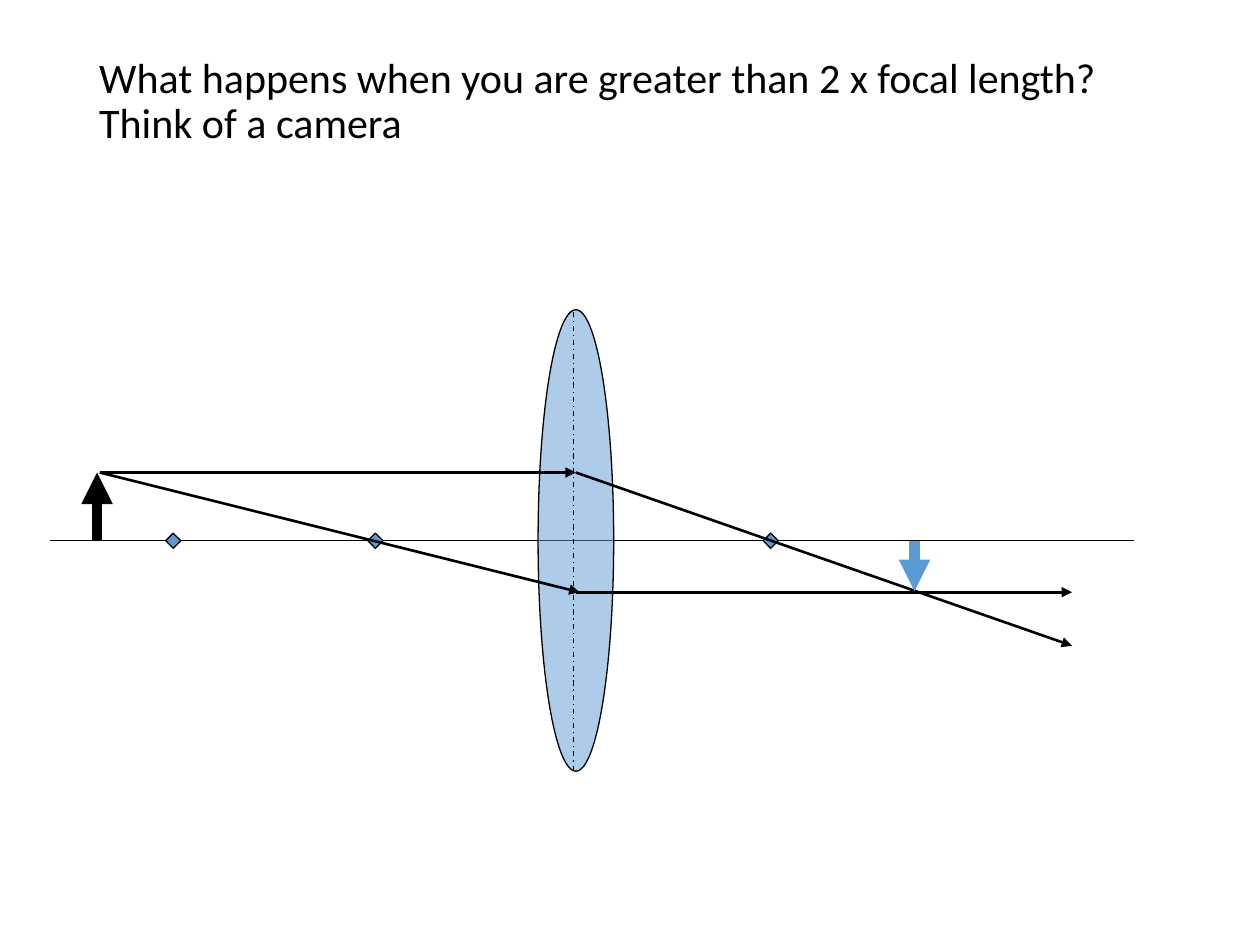
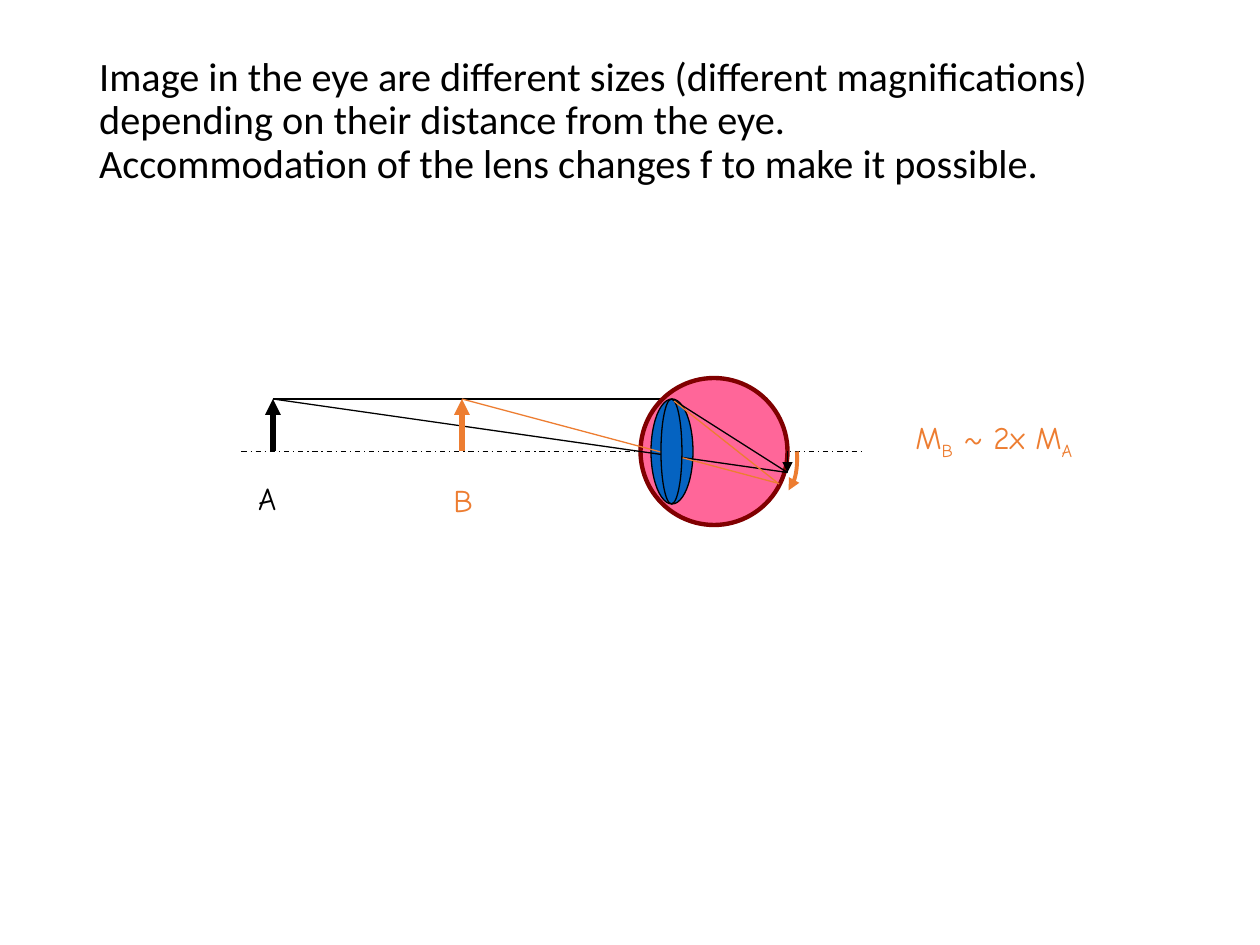
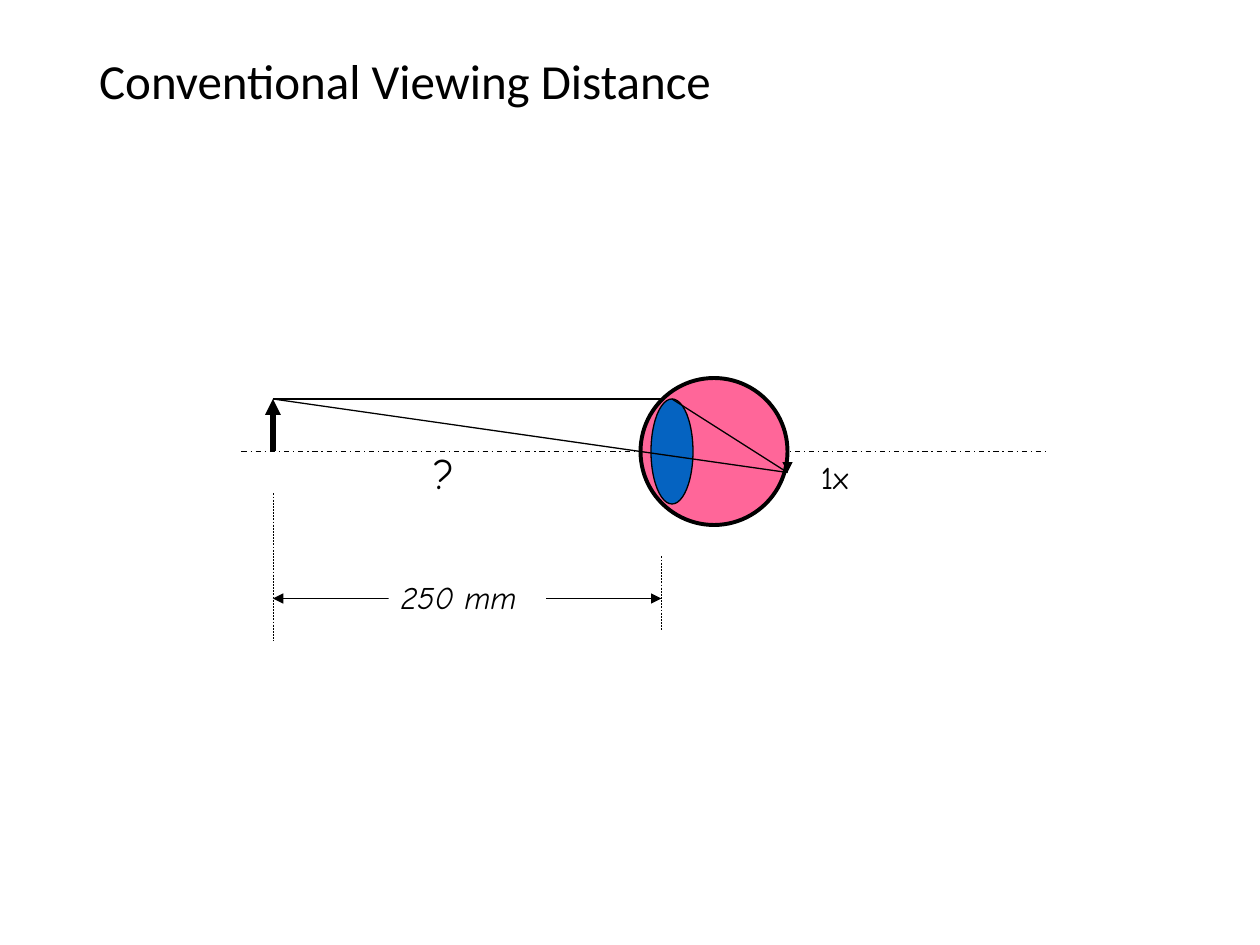
"""Three slides of ray diagrams: a camera lens, the eye at two distances, and the viewing distance."""
from lxml.etree import SubElement as Sub
from pptx import Presentation
from pptx.dml.color import RGBColor
from pptx.enum.dml import MSO_LINE as Dash
from pptx.enum.shapes import MSO_CONNECTOR as Conn, MSO_SHAPE as Kind
from pptx.enum.text import MSO_ANCHOR as Anchor, MSO_AUTO_SIZE as Fit, PP_ALIGN as Align
from pptx.oxml.ns import qn
from pptx.util import Inches, Pt

BLACK = RGBColor(0x00, 0x00, 0x00)
WHITE = RGBColor(0xFF, 0xFF, 0xFF)
SKY = RGBColor(0x5B, 0x9B, 0xD5)
BLUE = RGBColor(0x05, 0x63, 0xC1)
PINK = RGBColor(0xFF, 0x66, 0x99)
MAROON = RGBColor(0x80, 0x00, 0x00)
ORANGE = RGBColor(0xED, 0x7D, 0x31)

COLS, ROWS = 120, 90
CELL = Inches(10) / COLS


def draw_line(slide, start, end, color=BLACK, width=0.75, dash=None, ends=()):
    points = [round(v * CELL) for v in (*start, *end)]
    link = slide.shapes.add_connector(Conn.STRAIGHT, *points)
    link.line.color.rgb = color
    link.line.width = Pt(width)
    if dash:
        link.line.dash_style = dash
    for end_tag in ends:
        Sub(link.line._get_or_add_ln(), qn(f"a:{end_tag}"), type="triangle")
    Sub(link._element.spPr, qn("a:effectLst"))


def draw_shape(slide, kind, box, fill, edge=BLACK, width=0.75):
    shape = slide.shapes.add_shape(kind, *[round(v * CELL) for v in box])
    shape.shadow.inherit = False
    shape.fill.solid()
    shape.fill.fore_color.rgb = fill
    shape.line.color.rgb = edge
    shape.line.width = Pt(width)
    return shape


TAIL = ("tailEnd",)
BOTH = ("headEnd", "tailEnd")

deck = Presentation()
deck.slide_width, deck.slide_height = round(COLS * CELL), round(ROWS * CELL)

titles = [
    ("What happens when you are greater than 2 x focal length?\vThink of a camera", 24),
    ("Image in the eye are different sizes (different magnifications) depending on "
     "their distance from the eye.\vAccommodation of the lens changes f to make it possible.", 23),
    ("Conventional Viewing Distance", 28),
]
for text, size in titles:
    title = deck.slides.add_slide(deck.slide_layouts[5]).shapes.title
    title.left, title.top, title.width, title.height = [
        round(v * CELL) for v in (8.25, 4.8, 103.5, 17.4)]
    frame = title.text_frame
    frame.text = text
    frame.auto_size = Fit.NONE
    frame.vertical_anchor = Anchor.TOP
    para = frame.paragraphs[0]
    para.alignment = Align.LEFT
    para.line_spacing = 0.9
    para.font.name = "Calibri"
    para.font.size = Pt(size)
    para.font.color.rgb = BLACK
camera, eyes, view = deck.slides

axis, mid, top, low = 51.5, 54.85, 45, 56.4
draw_line(camera, (4.8, axis), (108, axis))
for focus in (16.5, 35.75, 73.4):
    draw_shape(camera, Kind.DIAMOND, (focus - 0.72, axis - 0.72, 1.44, 1.44), SKY)
draw_line(camera, (9.25, axis), (9.25, top), width=6, ends=TAIL)
lens = draw_shape(camera, Kind.OVAL, (51.25, 29.5, 7.2, 43.95), SKY)
tint = lens._element.spPr.find(qn("a:solidFill"))[0]
Sub(tint, qn("a:alpha"), val="50000")
rays = [
    ((9.5, top), (mid, top)),
    ((mid, top), (102.1, 61.5)),
    ((9.5, top), (55.2, low)),
    ((mid, low), (102.1, low)),
]
for start, end in rays:
    draw_line(camera, start, end, width=1.5, ends=TAIL)
draw_line(camera, (87.1, axis), (87.1, 56.3), SKY, 6, ends=TAIL)
draw_line(camera, (54.6, 73.4), (54.6, 29.4), dash=Dash.DASH_DOT)

axis, tip, far, near = 43, 38, 26, 44
pupil, spot = (64, tip), (75, 45)
for slide, end, rim, width in ((eyes, 82, MAROON, 2.5), (view, 100, BLACK, 2.25)):
    draw_line(slide, (23, axis), (end, axis), dash=Dash.DASH_DOT)
    draw_line(slide, (far, axis), (far, tip), width=3, ends=TAIL)
    draw_line(slide, (far, tip), pupil)
    draw_shape(slide, Kind.OVAL, (61, 36, 14, 14), PINK, rim, width)
    draw_shape(slide, Kind.OVAL, (62, tip, 4, 10), BLUE)
    draw_line(slide, pupil, spot)
    draw_line(slide, (far, tip), spot)
    draw_line(slide, (75, axis), spot, ends=TAIL)

draw_line(eyes, (near, axis), (near, tip), ORANGE, 3, ends=TAIL)
draw_line(eyes, (near, tip), (74, 46), ORANGE)
bend = [(75.1, 46.7), (75.7, 46), (76, 44.8), (75.9, axis)]
curve = []
for step in range(13):
    t = step / 12
    parts = ((1 - t) ** 3, 3 * t * (1 - t) ** 2, 3 * t ** 2 * (1 - t), t ** 3)
    curve.append([round(sum(w * p[i] for w, p in zip(parts, bend)) * CELL) for i in (0, 1)])
pen = eyes.shapes.build_freeform(*curve[0])
pen.add_line_segments(curve[1:], close=False)
arc = pen.convert_to_shape()
arc.shadow.inherit = False
arc.fill.background()
arc.line.color.rgb = ORANGE
arc.line.width = Pt(2.25)
Sub(arc.line._get_or_add_ln(), qn("a:headEnd"), type="triangle")
draw_shape(eyes, Kind.OVAL, (62.95, tip, 2, 10), BLUE)
draw_line(eyes, (64.2, 38.2), (74.2, 46.1), ORANGE)

draw_line(view, (far, 47), (far, 61), width=0.25, dash=Dash.DASH)
draw_line(view, (63, 53), (63, 60), width=0.25, dash=Dash.DASH)
draw_line(view, (far, 57), (63, 57), ends=BOTH)

labels = [
    (eyes, (86, 39.25, 19, 5.4), ["M", "B", " ~ 2x M", "A"], ORANGE, 18),
    (eyes, (23.4, 45, 5, 5.4), ["A"], BLACK, 18),
    (eyes, (42, 45.25, 5, 5.4), ["B"], ORANGE, 18),
    (view, (37, 54.5, 15, 5.4), ["250 mm"], BLACK, 18),
    (view, (77, 43, 6, 5.4), ["1x"], BLACK, 18),
    (view, (40, 42, 4.5, 6.85), ["?"], BLACK, 24),
]
for slide, box, parts, color, size in labels:
    label = slide.shapes.add_textbox(*[round(v * CELL) for v in box])
    frame = label.text_frame
    frame.word_wrap = parts != ["?"]
    para = frame.paragraphs[0]
    para.font.name = "Comic Neue"
    para.font.size = Pt(size)
    para.font.color.rgb = color
    for spot, part in enumerate(parts):
        run = para.add_run()
        run.text = part
        if spot % 2:
            run._r.get_or_add_rPr().set("baseline", "-25000")
    if parts == ["?"]:
        para.alignment = Align.CENTER
    if parts == ["250 mm"]:
        para.font.italic = True
        label.fill.solid()
        label.fill.fore_color.rgb = WHITE

deck.save("out.pptx")
